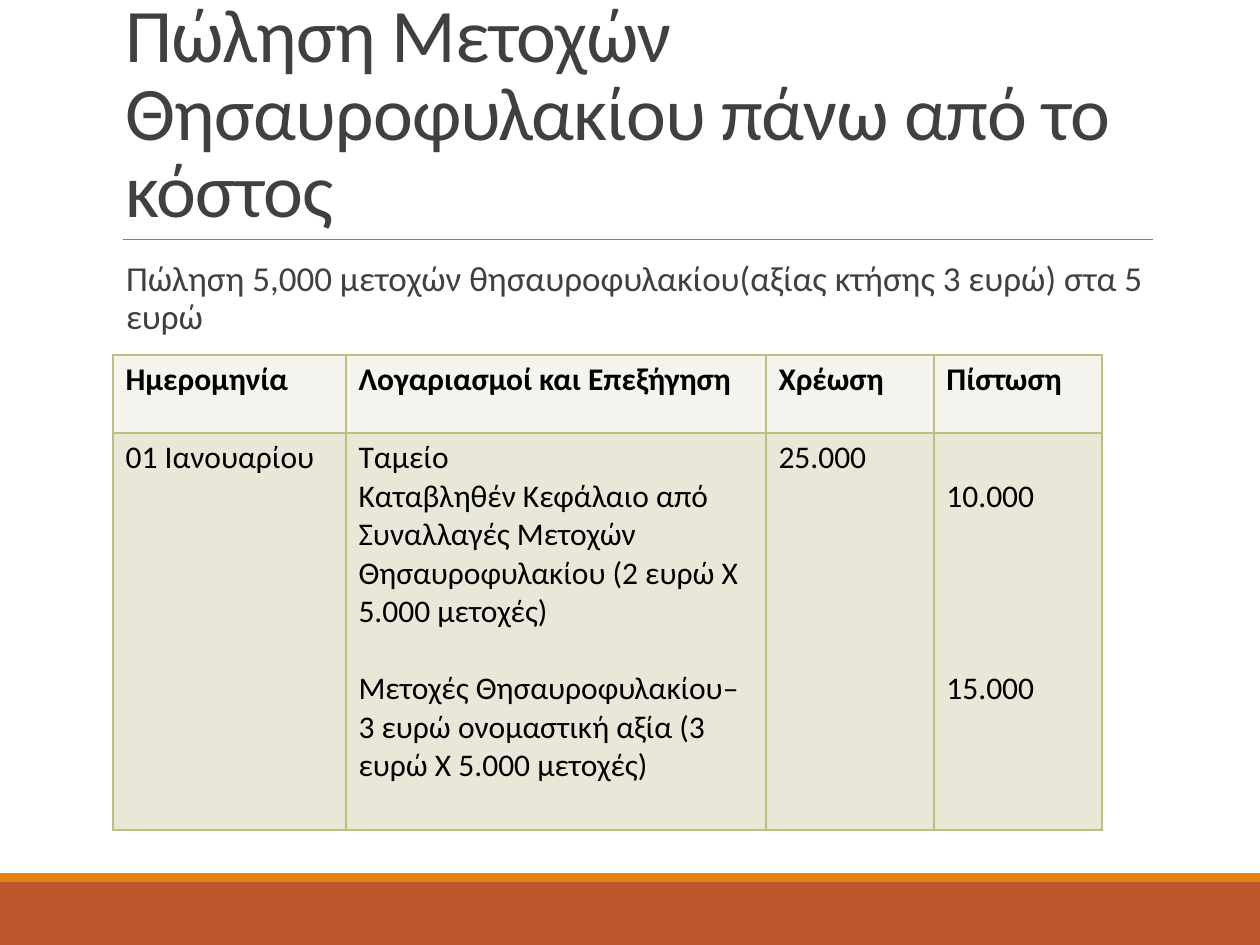
import pptx
import pptx.dml.color
import pptx.enum.shapes
import pptx.enum.text
import pptx.oxml
import pptx.oxml.ns
import pptx.util
from lxml import etree

PX_PER_INCH = 126
FONT = "Calibri"
COLOURS = {
    "text": "404040", "black": "000000", "rule": "808080",
    "band": "BD582C", "stripe": "E48312",
    "header": "F4F3ED", "body": "E9E7D8", "border": "C2BC80",
}
LINE_18 = pptx.util.Pt(22)  # height of one line of 18 pt text


def px(value):
    return pptx.util.Emu(round(value * 914400 / PX_PER_INCH))


def colour(name):
    return pptx.dml.color.RGBColor.from_string(COLOURS[name])


def assign(target, values):
    for name, value in values.items():
        setattr(target, name, value)


class SlideBuilder:
    def __init__(self, deck):
        self.page = deck.slides.add_slide(deck.slide_layouts[5])

    def style_text(self, para, text, size, ink="text", bold=False, **spacing):
        span = para.add_run()
        span.text = text
        assign(span.font, {"name": FONT, "size": pptx.util.Pt(size), "bold": bold})
        span.font.color.rgb = colour(ink)
        assign(para, {"alignment": pptx.enum.text.PP_ALIGN.LEFT, **spacing})
        return span

    def bar(self, left, top, width, height, fill):
        box = self.page.shapes.add_shape(
            pptx.enum.shapes.MSO_SHAPE.RECTANGLE, *map(px, (left, top, width, height)))
        box.shadow.inherit = False
        box.fill.solid()
        box.fill.fore_color.rgb = colour(fill)
        box.line.fill.background()

    def rule(self, left, right, y):
        line = self.page.shapes.add_connector(
            pptx.enum.shapes.MSO_CONNECTOR.STRAIGHT, *map(px, (left, y, right, y)))
        line.line.color.rgb = colour("rule")
        line.line.width = pptx.util.Pt(0.5)
        etree.SubElement(line._element.spPr, pptx.oxml.ns.qn("a:effectLst"))

    def title(self, left, top, width, height, text):
        box = self.page.shapes.title
        assign(box, {"left": px(left), "top": px(top),
                     "width": px(width), "height": px(height)})
        assign(box.text_frame, {
            "word_wrap": True,
            "auto_size": pptx.enum.text.MSO_AUTO_SIZE.NONE,
            "vertical_anchor": pptx.enum.text.MSO_ANCHOR.BOTTOM,
        })
        span = self.style_text(box.text_frame.paragraphs[0], text, 43.2, line_spacing=0.85)
        span.font._element.set("spc", "-50")

    def text(self, left, top, width, height, text):
        box = self.page.shapes.add_textbox(*map(px, (left, top, width, height)))
        assign(box.text_frame, {"word_wrap": True, "margin_left": px(13), "margin_right": 0})
        self.style_text(box.text_frame.paragraphs[0], text, 20, line_spacing=0.9)

    def table(self, left, top, columns, heights, rows):
        """Rows hold cells; a cell is a list of (text, blank lines above) pairs."""
        grid = self.page.shapes.add_table(
            len(rows), len(columns),
            *map(px, (left, top, sum(columns), sum(heights)))).table
        assign(grid, {"first_row": False, "horz_banding": False})
        for column, width in zip(grid.columns, columns):
            column.width = px(width)
        for number, (row, height, cells) in enumerate(zip(grid.rows, heights, rows)):
            row.height = px(height)
            for cell, lines in zip(row.cells, cells):
                self.fill_cell(cell, lines, is_header=number == 0)

    def fill_cell(self, cell, lines, is_header):
        cell.fill.solid()
        cell.fill.fore_color.rgb = colour("header" if is_header else "body")
        self.border(cell)
        for number, (text, gap) in enumerate(lines):
            if number == 0:
                para = cell.text_frame.paragraphs[0]
                cell.margin_top = px(6) + gap * LINE_18
                space = 0
            else:
                para = cell.text_frame.add_paragraph()
                space = gap * LINE_18
            self.style_text(para, text, 18, "black", is_header,
                            space_before=pptx.util.Emu(space))

    def border(self, cell):
        properties = cell._tc.get_or_add_tcPr()
        for place, side in enumerate("LRTB"):
            properties.insert(place, pptx.oxml.parse_xml(
                f'<a:ln{side} {pptx.oxml.ns.nsdecls("a")} w="12700"><a:solidFill>'
                f'<a:srgbClr val="{COLOURS["border"]}"/></a:solidFill></a:ln{side}>'))


def main():
    deck = pptx.Presentation()
    assign(deck, {"slide_width": px(1260), "slide_height": px(945)})
    slide = SlideBuilder(deck)
    slide.bar(0, 882, 1260, 63, "band")
    slide.bar(0, 873, 1260, 9, "stripe")
    slide.rule(123, 1153, 239)
    slide.title(113, 39, 1040, 200, "Πώληση Μετοχών Θησαυροφυλακίου πάνω από το κόστος")
    slide.text(113, 255, 1040, 554,
               "Πώληση 5,000 μετοχών θησαυροφυλακίου(αξίας κτήσης 3 ευρώ) στα 5 ευρώ")
    headings = ["Ημερομηνία", "Λογαριασμοί και Επεξήγηση", "Χρέωση", "Πίστωση"]
    entry = [
        [("01 Ιανουαρίου", 0)],
        [("Ταμείο", 0),
         ("Καταβληθέν Κεφάλαιο από Συναλλαγές Μετοχών Θησαυροφυλακίου "
          "(2 ευρώ Χ 5.000 μετοχές)", 0),
         ("Μετοχές Θησαυροφυλακίου– 3 ευρώ ονομαστική αξία "
          "(3 ευρώ Χ 5.000 μετοχές)", 1)],
        [("25.000", 0)],
        [("10.000", 1), ("15.000", 4)],
    ]
    slide.table(113, 355, [233, 420, 168, 168], [78, 397],
                [[[(heading, 0)] for heading in headings], entry])
    deck.save("out.pptx")


if __name__ == "__main__":
    main()
